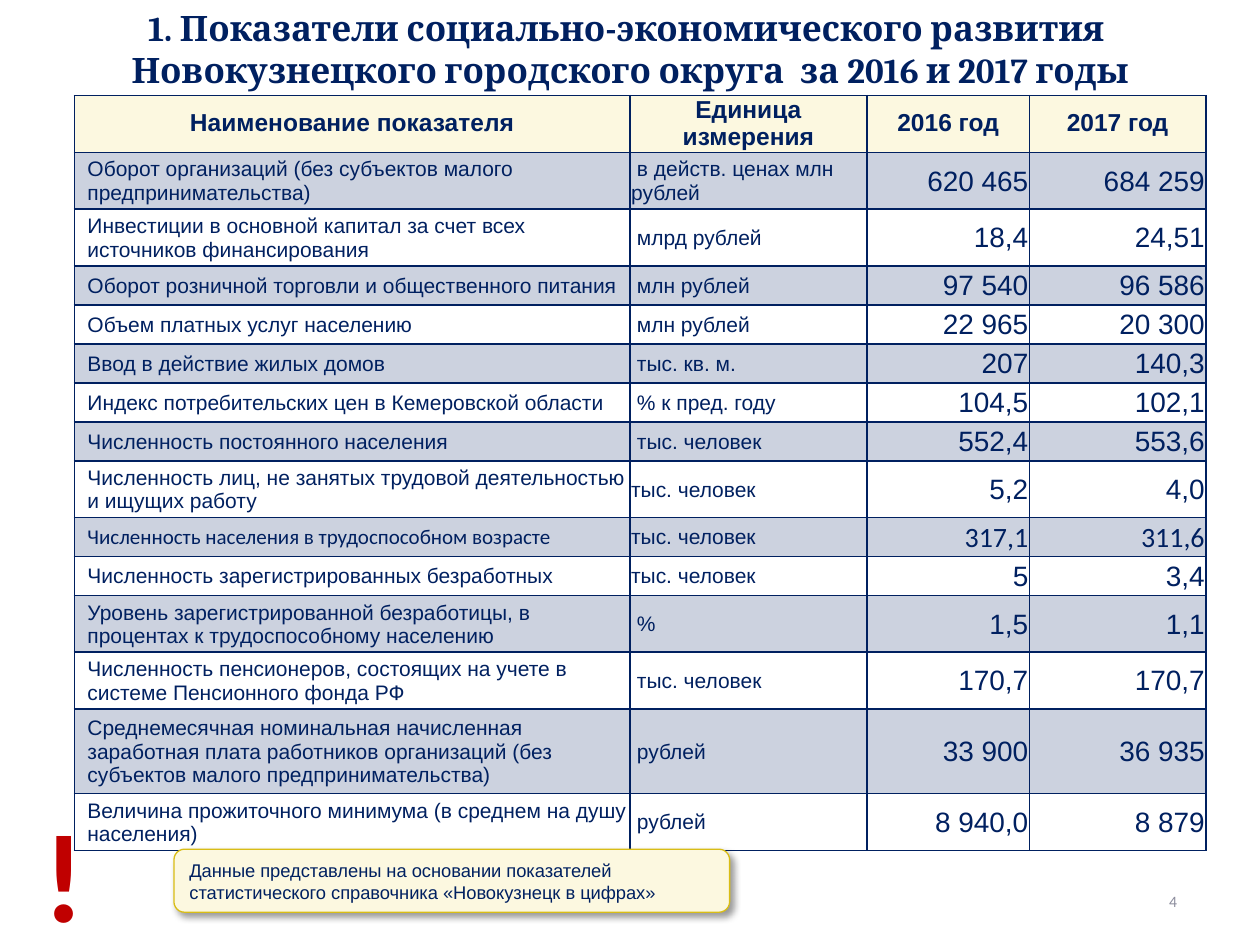
from dataclasses import dataclass

from lxml.etree import SubElement
from pptx import Presentation
from pptx.dml.color import RGBColor
from pptx.enum.shapes import MSO_SHAPE
from pptx.enum.text import MSO_ANCHOR, MSO_AUTO_SIZE, PP_ALIGN
from pptx.oxml import parse_xml
from pptx.oxml.ns import nsdecls, qn
from pptx.slide import Slide
from pptx.util import Pt

NAVY = "002060"
CREAM = "FCF8E0"


@dataclass(frozen=True)
class TextStyle:
    size: float
    font: str = "Arial"
    color: str = NAVY
    bold: bool = False
    alignment: PP_ALIGN = PP_ALIGN.LEFT
    line_spacing: float = 1.0


@dataclass(frozen=True)
class Box:
    left: float
    top: float
    width: float
    height: float

    def lengths(self) -> tuple:
        return Pt(self.left), Pt(self.top), Pt(self.width), Pt(self.height)


@dataclass(frozen=True)
class Indicator:
    name: str
    unit: str
    value_2016: str
    value_2017: str
    height: float = 22.3
    font: str = "Arial"


TWO_LINES = 32.4
THREE_LINES = 48.4
COLUMN_WIDTHS = (317.5, 135.4, 92.9, 100.8)
HEADERS = ("Наименование показателя", "Единица измерения", "2016 год", "2017 год")
INDICATORS = (
    Indicator("Оборот организаций (без субъектов малого предпринимательства)",
              " в действ. ценах млн рублей", "620 465", "684 259", TWO_LINES),
    Indicator("Инвестиции в основной капитал за счет всех источников финансирования",
              " млрд рублей", "18,4", "24,51", TWO_LINES),
    Indicator("Оборот розничной торговли и общественного питания",
              " млн рублей", "97 540", "96 586"),
    Indicator("Объем платных услуг населению", " млн рублей", "22 965", "20 300"),
    Indicator("Ввод в действие жилых домов", " тыс. кв. м.", "207", "140,3"),
    Indicator("Индекс потребительских цен в Кемеровской области",
              " % к пред. году", "104,5", "102,1"),
    Indicator("Численность постоянного населения", " тыс. человек", "552,4", "553,6"),
    Indicator("Численность лиц, не занятых трудовой деятельностью и ищущих работу",
              "тыс. человек", "5,2", "4,0", TWO_LINES),
    Indicator("Численность населения в трудоспособном возрасте",
              "тыс. человек", "317,1", "311,6", font="Calibri"),
    Indicator("Численность зарегистрированных безработных", "тыс. человек", "5", "3,4"),
    Indicator("Уровень зарегистрированной безработицы, в процентах к трудоспособному населению",
              " %", "1,5", "1,1", TWO_LINES),
    Indicator("Численность пенсионеров, состоящих на учете в системе Пенсионного фонда РФ",
              " тыс. человек", "170,7", "170,7", TWO_LINES),
    Indicator("Среднемесячная номинальная начисленная заработная плата работников "
              "организаций (без субъектов малого предпринимательства)",
              " рублей", "33 900", "36 935", THREE_LINES),
    Indicator("Величина прожиточного минимума (в среднем на душу населения)",
              " рублей", "8 940,0", "8 879", TWO_LINES),
)


def rgb(color: str) -> RGBColor:
    return RGBColor.from_string(color)


def set_attributes(target, values: dict) -> None:
    for name, value in values.items():
        setattr(target, name, value)


def write_text(text_frame, lines: tuple, style: TextStyle) -> None:
    for index, line in enumerate(lines):
        paragraph = text_frame.paragraphs[0] if index == 0 else text_frame.add_paragraph()
        set_attributes(paragraph, {
            "alignment": style.alignment, "line_spacing": style.line_spacing,
        })
        run = paragraph.add_run()
        run.text = line
        set_attributes(run.font, {"name": style.font, "size": Pt(style.size), "bold": style.bold})
        run.font.color.rgb = rgb(style.color)


def add_label(slide: Slide, box: Box, text: str, style: TextStyle, frame_format: dict) -> None:
    shape = slide.shapes.add_textbox(*box.lengths())
    set_attributes(shape.text_frame, frame_format)
    write_text(shape.text_frame, (text,), style)


def draw_borders(cell) -> None:
    properties = cell._tc.get_or_add_tcPr()
    for position, side in enumerate(("lnL", "lnR", "lnT", "lnB")):
        properties.insert(position, parse_xml(
            f'<a:{side} {nsdecls("a")} w="{Pt(1)}"><a:solidFill>'
            f'<a:srgbClr val="{NAVY}"/></a:solidFill></a:{side}>'))


def fill_cell(cell, color: str, opacity: int = 100) -> None:
    cell.fill.solid()
    cell.fill.fore_color.rgb = rgb(color)
    if opacity < 100:
        color_element = cell._tc.tcPr.find(qn("a:solidFill")).find(qn("a:srgbClr"))
        SubElement(color_element, qn("a:alpha"), val=str(opacity * 1000))


def format_cell(cell, text: str, style: TextStyle) -> None:
    set_attributes(cell, {
        "vertical_anchor": MSO_ANCHOR.MIDDLE, "margin_left": Pt(0.7),
        "margin_right": Pt(0.7), "margin_top": Pt(0.7), "margin_bottom": Pt(0),
    })
    write_text(cell.text_frame, (text,), style)
    draw_borders(cell)


def add_indicator_table(slide: Slide) -> None:
    heights = (TWO_LINES, *(indicator.height for indicator in INDICATORS))
    box = Box(42.5, 54.7, sum(COLUMN_WIDTHS), sum(heights))
    table = slide.shapes.add_table(len(heights), len(COLUMN_WIDTHS), *box.lengths()).table
    set_attributes(table, {"first_row": False, "horz_banding": False})
    for column, width in zip(table.columns, COLUMN_WIDTHS):
        column.width = Pt(width)
    for row, height in zip(table.rows, heights):
        row.height = Pt(height)
    header_style = TextStyle(14, bold=True, alignment=PP_ALIGN.CENTER, line_spacing=0.95)
    for cell, header in zip(table.rows[0].cells, HEADERS):
        format_cell(cell, header, header_style)
        cell.margin_top = Pt(0)
        fill_cell(cell, CREAM)
    for number, indicator in enumerate(INDICATORS, start=1):
        name_style = TextStyle(12, indicator.font)
        value_style = TextStyle(16, indicator.font, alignment=PP_ALIGN.RIGHT)
        contents = (
            (indicator.name, name_style), (indicator.unit, TextStyle(12)),
            (indicator.value_2016, value_style), (indicator.value_2017, value_style),
        )
        cells = tuple(table.rows[number].cells)
        for cell, (text, style) in zip(cells, contents):
            format_cell(cell, text, style)
            if number % 2:
                fill_cell(cell, NAVY, 20)
            else:
                cell.fill.background()
        name_properties = cells[0].text_frame.paragraphs[0]._p.get_or_add_pPr()
        for name, value in {"marL": Pt(6.8), "indent": Pt(0)}.items():
            name_properties.set(name, str(value))


def add_title(slide: Slide) -> None:
    title = slide.shapes.title
    set_attributes(title, dict(zip(("left", "top", "width", "height"),
                                   Box(0, 0, 720, 55.4).lengths())))
    set_attributes(title.text_frame, {
        "word_wrap": True, "auto_size": MSO_AUTO_SIZE.NONE, "vertical_anchor": MSO_ANCHOR.TOP,
    })
    write_text(title.text_frame, (
        "1. Показатели социально-экономического развития ",
        "Новокузнецкого городского округа  за 2016 и 2017 годы",
    ), TextStyle(20, "Cambria", bold=True, alignment=PP_ALIGN.CENTER))


def add_source_note(slide: Slide) -> None:
    note = slide.shapes.add_shape(MSO_SHAPE.ROUNDED_RECTANGLE, *Box(99.4, 485.3, 317.5, 36).lengths())
    note.fill.solid()
    note.fill.fore_color.rgb = rgb(CREAM)
    note.line.color.rgb = rgb("D9BD15")
    note.line.width = Pt(0.75)
    note.shadow.inherit = False
    note._element.spPr.find(qn("a:effectLst")).append(parse_xml(
        f'<a:outerShdw {nsdecls("a")} blurRad="{Pt(4)}" dist="{Pt(3)}" dir="2700000">'
        '<a:srgbClr val="000000"><a:alpha val="40000"/></a:srgbClr></a:outerShdw>'))
    set_attributes(note.text_frame, {"word_wrap": True, "vertical_anchor": MSO_ANCHOR.MIDDLE})
    write_text(note.text_frame, (
        "Данные представлены на основании показателей "
        "статистического справочника «Новокузнецк в цифрах»",
    ), TextStyle(10.5))


def main() -> None:
    presentation = Presentation()
    set_attributes(presentation, {"slide_width": Pt(720), "slide_height": Pt(540)})
    slide = presentation.slides.add_slide(presentation.slide_layouts[5])
    add_label(slide, Box(517.7, 500.4, 162, 28.8), "4",
              TextStyle(9, "Calibri", "8C8D9D", alignment=PP_ALIGN.RIGHT),
              {"word_wrap": True, "vertical_anchor": MSO_ANCHOR.MIDDLE})
    add_indicator_table(slide)
    add_title(slide)
    add_source_note(slide)
    add_label(slide, Box(14, 451.4, 45.4, 69.8), "!",
              TextStyle(72, "Calibri", "C00000", True, PP_ALIGN.CENTER),
              {"word_wrap": False, "vertical_anchor": MSO_ANCHOR.TOP})
    presentation.save("out.pptx")


if __name__ == "__main__":
    main()
